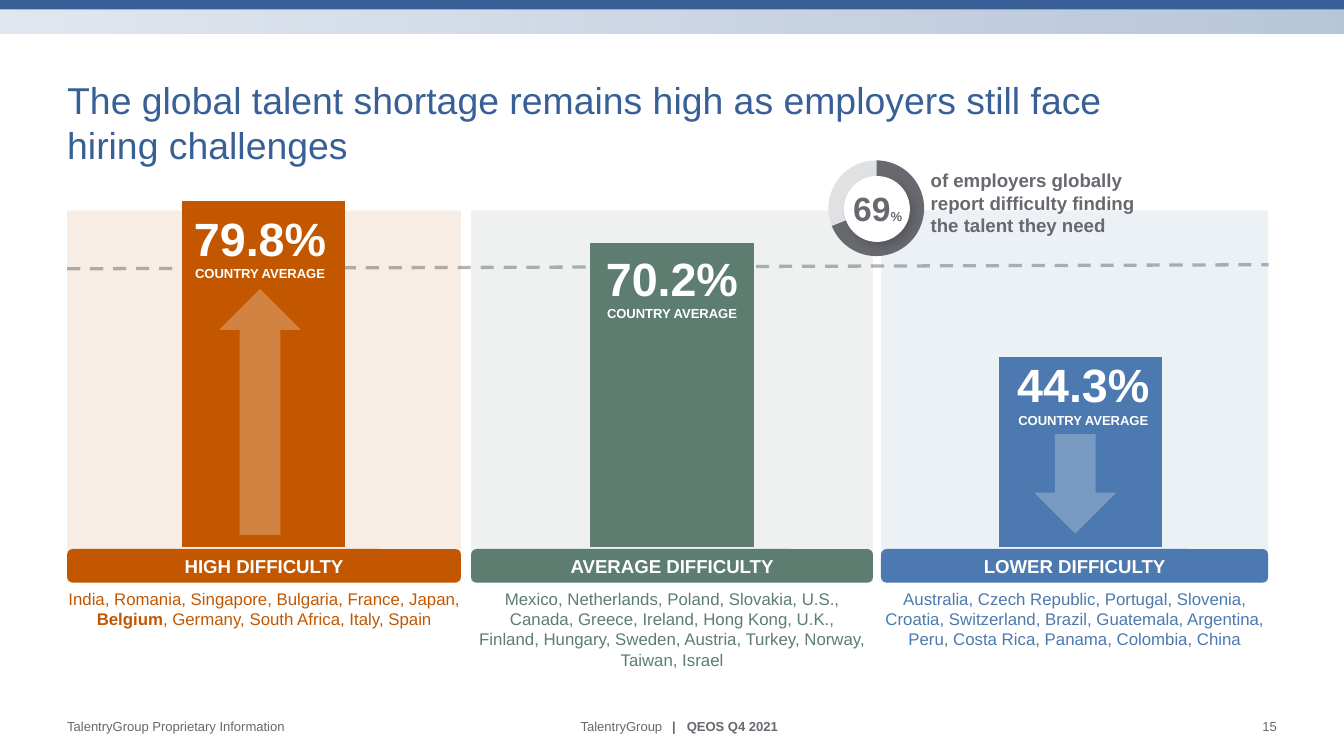
from dataclasses import dataclass
from typing import NamedTuple

from lxml import etree
from pptx import Presentation
from pptx.chart.data import CategoryChartData
from pptx.dml.color import RGBColor
from pptx.enum.chart import XL_CHART_TYPE
from pptx.enum.dml import MSO_LINE
from pptx.enum.shapes import MSO_CONNECTOR, MSO_SHAPE
from pptx.enum.text import MSO_ANCHOR, MSO_AUTO_SIZE, PP_ALIGN
from pptx.oxml.ns import qn
from pptx.util import Inches, Pt

LEFT, CENTER, RIGHT = PP_ALIGN.LEFT, PP_ALIGN.CENTER, PP_ALIGN.RIGHT
TOP, MIDDLE = MSO_ANCHOR.TOP, MSO_ANCHOR.MIDDLE
RECT, PILL, OVAL = MSO_SHAPE.RECTANGLE, MSO_SHAPE.ROUNDED_RECTANGLE, MSO_SHAPE.OVAL
ARROW = MSO_SHAPE.UP_ARROW
STACKED, PIE = XL_CHART_TYPE.COLUMN_STACKED, XL_CHART_TYPE.PIE
GRID_COLUMNS = 100
SLIDE_WIDTH = Inches(10)
SLIDE_HEIGHT = SLIDE_WIDTH * 9 // 16
CELL = SLIDE_WIDTH / GRID_COLUMNS


@dataclass(frozen=True)
class Theme:
    font: str = "Arial"
    blue: str = "386097"
    grey: str = "67696F"
    pale: str = "E0E1E3"
    white: str = "FFFFFF"
    high: str = "C25700"
    average: str = "5C7D70"
    lower: str = "4C79AF"
    title: float = 20
    figure: float = 25
    share: float = 18
    label: float = 10
    countries: float = 9
    small: float = 7


class Area(NamedTuple):
    left: float
    top: float
    width: float
    height: float

    def emu(self) -> list[int]:
        return [round(cells * CELL) for cells in self]


class Span(NamedTuple):
    text: str
    size: float | None = None
    bold: bool | None = None


@dataclass(frozen=True)
class Group:
    label: str
    color: str
    left: float
    width: float
    bar: float
    average: str
    average_left: float
    average_top: float
    inset: float
    countries: list[Span]


THEME = Theme()
GROUPS = [
    Group("HIGH DIFFICULTY", THEME.high, 5, 29.3, 100, "79.8%", 13.3, 15.6, 0, [
        Span("India, Romania, Singapore, Bulgaria, France, Japan, "),
        Span("Belgium", bold=True),
        Span(", Germany, South Africa, Italy, Spain")]),
    Group("AVERAGE DIFFICULTY", THEME.average, 35.05, 29.9, 88, "70.2%", 43.95, 18.6, 0.55, [
        Span("Mexico, Netherlands, Poland, Slovakia, U.S., Canada, Greece, Ireland, "
             "Hong Kong, U.K., Finland, Hungary, Sweden, Austria, Turkey, Norway, "
             "Taiwan, Israel")]),
    Group("LOWER DIFFICULTY", THEME.lower, 65.55, 28.8, 55, "44.3%", 74.55, 26.5, 0, [
        Span("Australia, Czech Republic, Portugal, Slovenia, Croatia, Switzerland, "
             "Brazil, Guatemala, Argentina, Peru, Costa Rica, Panama, Colombia, China")]),
]


def rgb(color: str) -> RGBColor:
    return RGBColor.from_string(color)


def fade(properties, *percents: float) -> None:
    for color, percent in zip(properties.iter(qn("a:srgbClr")), percents):
        etree.SubElement(color, qn("a:alpha"), val=str(percent * 1000))


def write(frame, spans: list[Span], *, size: float, color: str, bold=False,
          align=LEFT, anchor=TOP, wrap=True, tabs=()) -> None:
    frame.auto_size = MSO_AUTO_SIZE.NONE
    frame.word_wrap = wrap
    frame.vertical_anchor = anchor
    frame.margin_left = frame.margin_right = frame.margin_top = frame.margin_bottom = 0
    paragraph = frame.paragraphs[0]
    if tabs:
        stops = etree.SubElement(paragraph._p.get_or_add_pPr(), qn("a:tabLst"))
        for stop in tabs:
            etree.SubElement(stops, qn("a:tab"), pos=str(round(stop * CELL)), algn="l")
    paragraph.alignment = align
    for span in spans:
        for index, line in enumerate(span.text.split("\n")):
            if index:
                paragraph.add_line_break()
            if line:
                run = paragraph.add_run()
                run.text = line
                run.font.name = THEME.font
                run.font.size = Pt(span.size or size)
                run.font.bold = bold if span.bold is None else span.bold
                run.font.color.rgb = rgb(color)


def add_text(slide, area: Area, spans: list[Span], **style) -> None:
    write(slide.shapes.add_textbox(*area.emu()).text_frame, spans, **style)


def add_block(slide, kind, area: Area, color: str, opacity: float = 100):
    block = slide.shapes.add_shape(kind, *area.emu())
    block.shadow.inherit = False
    block.fill.solid()
    block.fill.fore_color.rgb = rgb(color)
    block.line.fill.background()
    if opacity < 100:
        fade(block._element.spPr, opacity)
    return block


def add_plot(slide, kind, area: Area, values: list[float], colors: list[str], layout: Area):
    data = CategoryChartData()
    data.categories = [str(number + 1) for number in range(len(values))]
    data.add_series("Series 1", values)
    chart = slide.shapes.add_chart(kind, *area.emu(), data).chart
    chart.has_legend = chart.has_title = False
    chart.font.name = THEME.font
    chart.font.size = Pt(THEME.label)
    chart.font.color.rgb = rgb(THEME.blue)
    for index, color in enumerate(colors):
        fill = chart.plots[0].series[0].points[index].format.fill
        fill.solid()
        fill.fore_color.rgb = rgb(color)
    body = chart._chartSpace.find(qn("c:chart"))
    background = etree.Element(qn("c:spPr"))
    etree.SubElement(background, qn("a:noFill"))
    body.addnext(background)
    plot_area = body.find(qn("c:plotArea"))
    for old in plot_area.findall(qn("c:layout")):
        plot_area.remove(old)
    frame = etree.Element(qn("c:layout"))
    plot_area.insert(0, frame)
    manual = etree.SubElement(frame, qn("c:manualLayout"))
    settings = [("layoutTarget", "inner"), ("xMode", "edge"), ("yMode", "edge"),
                *zip("xywh", layout)]
    for tag, value in settings:
        etree.SubElement(manual, qn(f"c:{tag}"), val=str(value))
    return chart


def add_banner(slide) -> None:
    band = add_block(slide, RECT, Area(0, 0, GRID_COLUMNS, 2.5), THEME.blue)
    band.fill.gradient()
    band.fill.gradient_angle = 0
    for stop, position in zip(band.fill.gradient_stops, (0, 1)):
        stop.color.rgb = rgb(THEME.blue)
        stop.position = position
    fade(band._element.spPr, 15, 36)
    add_block(slide, RECT, Area(0, 0, GRID_COLUMNS, 0.7), THEME.blue)


def add_global_line(slide) -> None:
    start_x, start_y, end_x, end_y = Area(5, 20, 94.4, 19.7).emu()
    average = slide.shapes.add_connector(MSO_CONNECTOR.STRAIGHT, start_x, start_y, end_x, end_y)
    average.line.color.rgb = rgb(THEME.grey)
    average.line.width = Pt(1.75)
    average.line.dash_style = MSO_LINE.DASH
    fade(average._element.spPr, 50)
    etree.SubElement(average._element.spPr, qn("a:effectLst"))


def add_bars(slide) -> None:
    chart = add_plot(slide, STACKED, Area(2.5, 11.05, 95, 30.3), [g.bar for g in GROUPS],
                     [g.color for g in GROUPS], Area(0.02, 0.13, 0.96, 0.85))
    chart.plots[0].gap_width = 150
    chart.plots[0].overlap = 100
    chart.value_axis.minimum_scale = 0
    chart.value_axis.maximum_scale = 100
    chart.value_axis.has_major_gridlines = False
    chart.value_axis.visible = chart.category_axis.visible = False


def add_group(slide, group: Group) -> None:
    pill = add_block(slide, PILL, Area(group.left, 40.85, group.width, 2.5), group.color)
    write(pill.text_frame, [Span(group.label)], size=THEME.label, color=THEME.white,
          bold=True, align=CENTER, anchor=MIDDLE)
    add_text(slide, Area(group.left + group.inset, 43.8, group.width - 2 * group.inset, 6.1),
             group.countries, size=THEME.countries, color=group.color, align=CENTER)
    add_text(slide, Area(group.average_left, group.average_top, 12.1, 5.4),
             [Span(group.average + "\n"), Span("COUNTRY AVERAGE", THEME.small)],
             size=THEME.figure, color=THEME.white, bold=True, align=CENTER)


def add_global_share(slide) -> None:
    add_text(slide, Area(69.25, 12.25, 17.4, 5.7),
             [Span("of employers globally report difficulty finding the talent they need")],
             size=THEME.label, color=THEME.grey, bold=True, anchor=MIDDLE)
    ring = add_plot(slide, PIE, Area(60.25, 10.55, 9.9, 9.9), [69, 31],
                    [THEME.grey, THEME.pale], Area(0.14, 0.14, 0.72, 0.72))
    ring.plots[0].vary_by_categories = True
    hole = add_block(slide, OVAL, Area(62.8, 13.1, 4.9, 4.9), THEME.white)
    effects = hole._element.spPr.find(qn("a:effectLst"))
    shadow = etree.SubElement(effects, qn("a:outerShdw"), blurRad=str(Pt(4)),
                              dist=str(Pt(3)), dir=str(45 * 60000))
    etree.SubElement(shadow, qn("a:srgbClr"), val="000000")
    fade(shadow, 15)
    add_text(slide, Area(63.4, 14, 3.8, 3), [Span("69"), Span("%", THEME.small)],
             size=THEME.share, color=THEME.grey, bold=True, align=CENTER, wrap=False)


def add_footer(slide) -> None:
    style = dict(size=THEME.small, color=THEME.grey, anchor=MIDDLE)
    add_text(slide, Area(5, 53.45, 19.5, 1.2), [Span("TalentryGroup Proprietary Information")], **style)
    add_text(slide, Area(43.2, 53.45, 19.5, 1.2),
             [Span("TalentryGroup"), Span("\t|\tQEOS Q4 2021", bold=True)], tabs=(6.8, 7.9), **style)
    add_text(slide, Area(87.2, 53.45, 7.8, 1.2), [Span("15")], align=RIGHT, **style)


def main() -> None:
    deck = Presentation()
    deck.slide_width, deck.slide_height = SLIDE_WIDTH, SLIDE_HEIGHT
    slide = deck.slides.add_slide(deck.slide_layouts[5])
    title = slide.shapes.title
    title.left, title.top, title.width, title.height = Area(5, 4.5, 90, 9.2).emu()
    write(title.text_frame,
          [Span("The global talent shortage remains high as employers still face \nhiring challenges")],
          size=THEME.title, color=THEME.blue, anchor=MIDDLE)
    add_footer(slide)
    add_banner(slide)
    add_global_line(slide)
    for group in GROUPS:
        add_block(slide, RECT, Area(group.left, 15.65, group.width, 27.7), group.color, 10)
    add_bars(slide)
    for group in GROUPS:
        add_group(slide, group)
    add_global_share(slide)
    add_block(slide, ARROW, Area(16.3, 21.5, 6.1, 18.3), THEME.white, 25)
    add_block(slide, ARROW, Area(76.95, 32.3, 6.1, 7.4), THEME.white, 25).rotation = 180
    deck.save("out.pptx")


if __name__ == "__main__":
    main()
